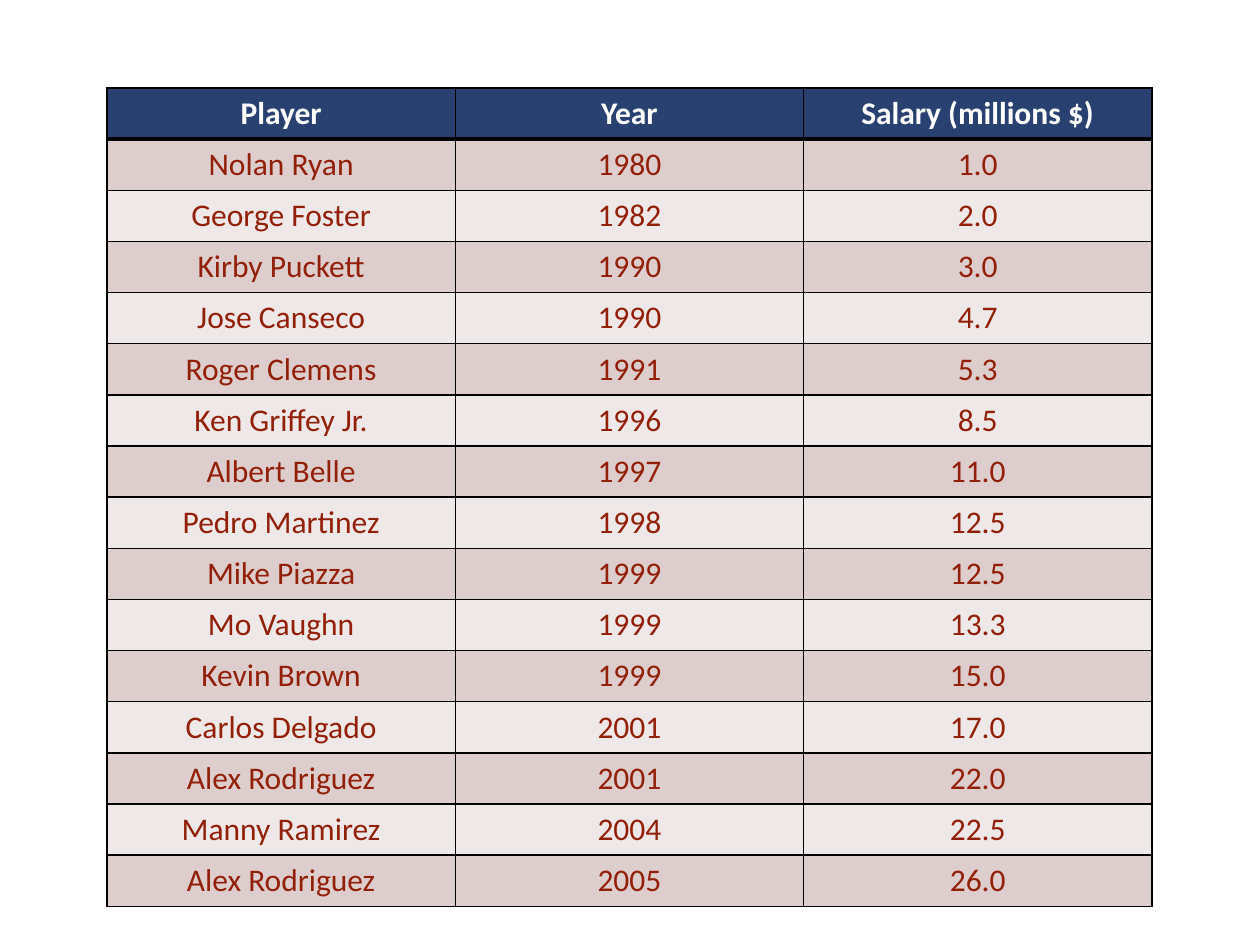
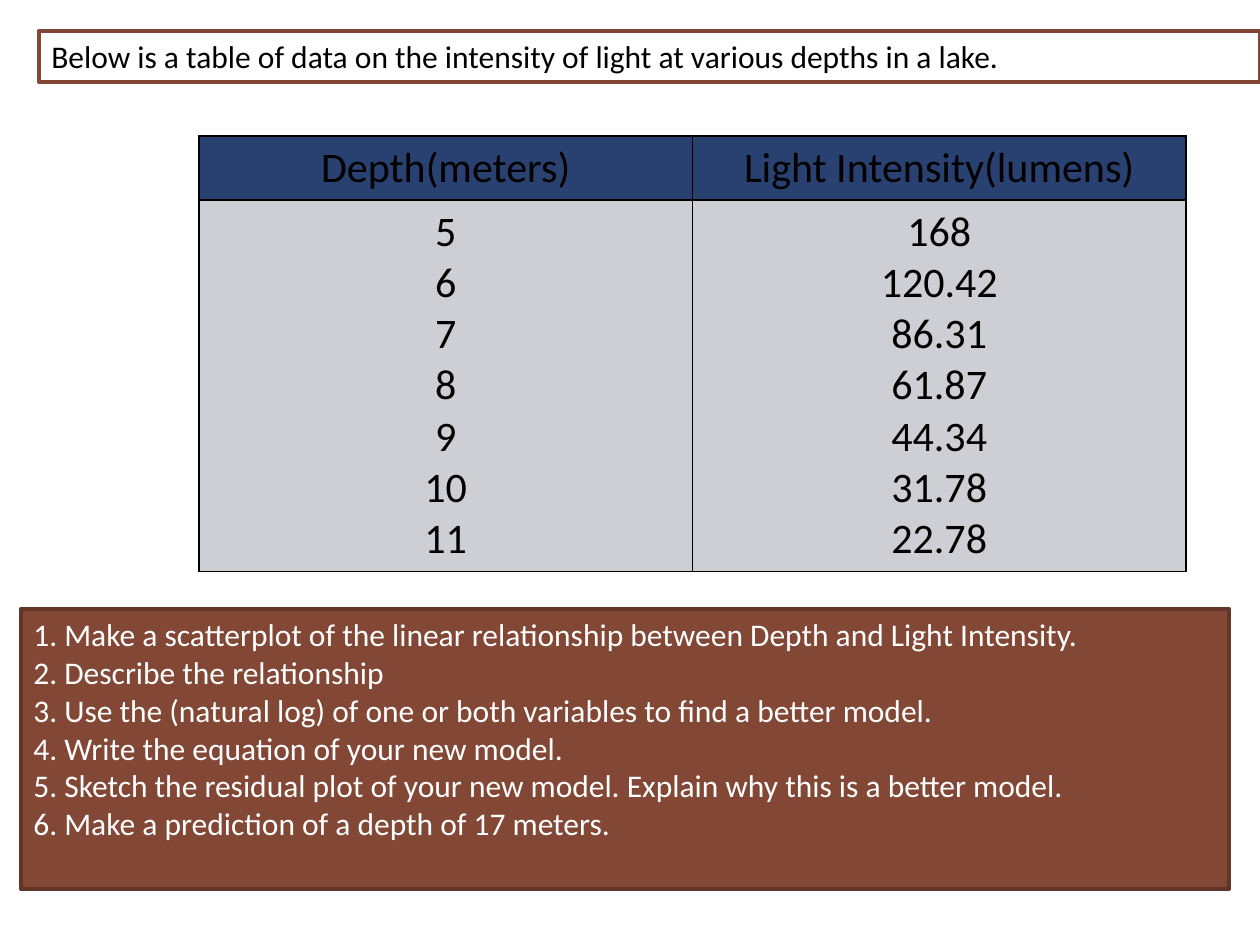
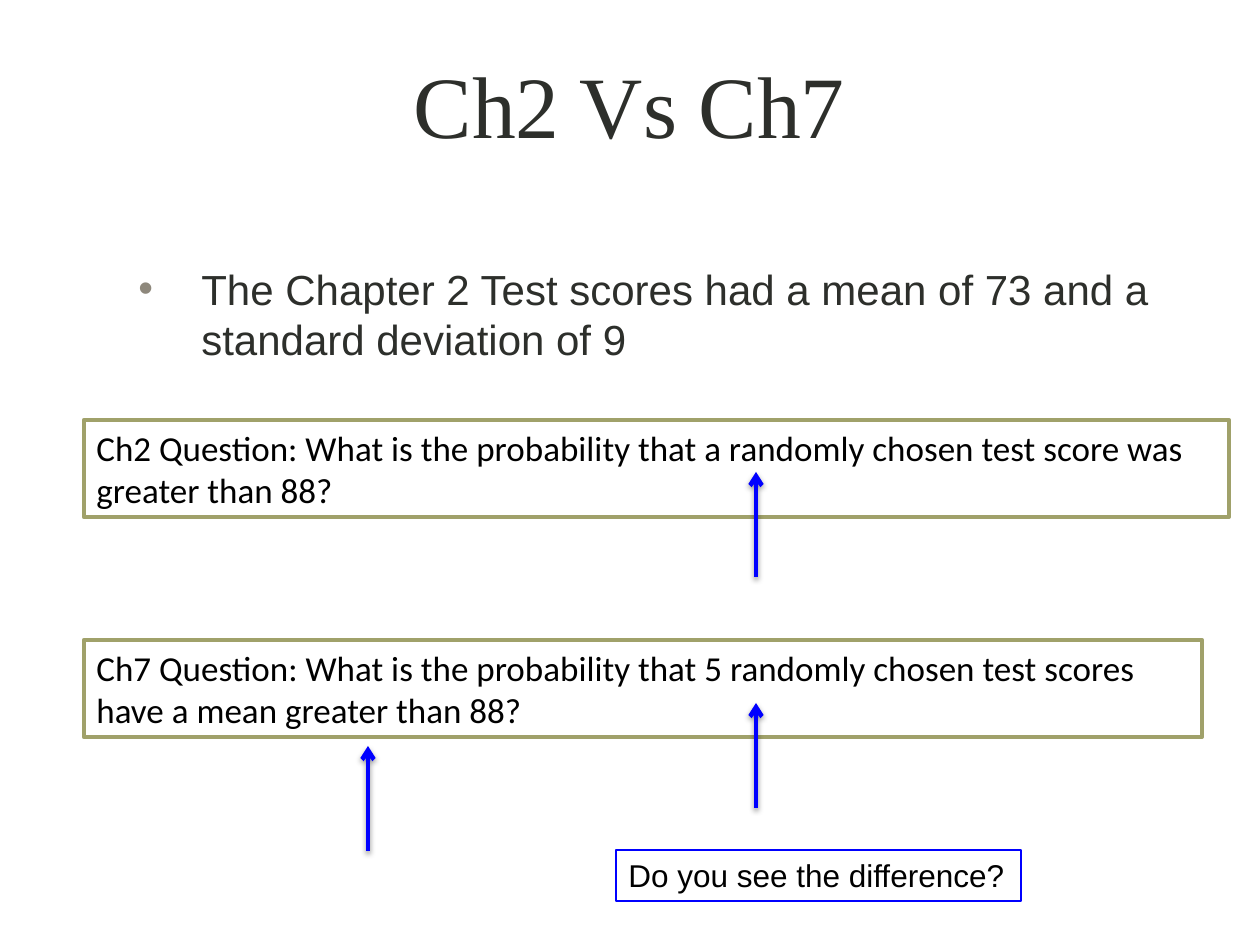
from pptx import Presentation
from pptx.dml.color import RGBColor
from pptx.enum.shapes import MSO_CONNECTOR as Connector, MSO_SHAPE as Preset
from pptx.enum.text import MSO_ANCHOR as Anchor, PP_ALIGN as Align
from pptx.oxml import parse_xml
from pptx.oxml.ns import nsdecls
from pptx.util import Inches, Pt

SCALE = Inches(1) / 126
BLANK, TITLE_ONLY = 6, 5

BLACK = RGBColor(0x00, 0x00, 0x00)
WHITE = RGBColor(0xFF, 0xFF, 0xFF)
NAVY = RGBColor(0x29, 0x41, 0x71)
GREY = RGBColor(0xCD, 0xCF, 0xD5)
ROSE = RGBColor(0xDE, 0xCD, 0xCD)
PALE_ROSE = RGBColor(0xEF, 0xE8, 0xE8)
RED = RGBColor(0x92, 0x1F, 0x07)
BROWN = RGBColor(0x83, 0x47, 0x36)
DARK_BROWN = RGBColor(0x61, 0x35, 0x28)
OLIVE = RGBColor(0xA0, 0xA1, 0x6A)
BLUE = RGBColor(0x00, 0x00, 0xFF)
INK = RGBColor(0x2D, 0x2F, 0x2B)
TAUPE = RGBColor(0x8E, 0x88, 0x7C)

TITLE = dict(name="Times New Roman", size=Pt(50), color=INK)
BULLET = dict(name="Arial", size=Pt(24), color=INK)
CALLOUT = dict(name="Arial", size=Pt(18), color=BLACK)
QUESTION = dict(name="Calibri", size=Pt(20), color=BLACK)
NOTE = dict(name="Calibri", size=Pt(18), color=BLACK)
TASK = NOTE | dict(color=WHITE)
DATA = NOTE | dict(size=Pt(24))
HEADING = TASK | dict(bold=True)
SALARY = NOTE | dict(color=RED, bold=False)

SALARIES = [
    ("Player", "Year", "Salary (millions $)"),
    ("Nolan Ryan", "1980", "1.0"),
    ("George Foster", "1982", "2.0"),
    ("Kirby Puckett", "1990", "3.0"),
    ("Jose Canseco", "1990", "4.7"),
    ("Roger Clemens", "1991", "5.3"),
    ("Ken Griffey Jr.", "1996", "8.5"),
    ("Albert Belle", "1997", "11.0"),
    ("Pedro Martinez", "1998", "12.5"),
    ("Mike Piazza", "1999", "12.5"),
    ("Mo Vaughn", "1999", "13.3"),
    ("Kevin Brown", "1999", "15.0"),
    ("Carlos Delgado", "2001", "17.0"),
    ("Alex Rodriguez", "2001", "22.0"),
    ("Manny Ramirez", "2004", "22.5"),
    ("Alex Rodriguez", "2005", "26.0"),
]
LIGHT = [
    ("Depth(meters)", "Light Intensity(lumens)"),
    ("5\n6\n7\n8\n9\n10\n11", "168\n120.42\n86.31\n61.87\n44.34\n31.78\n22.78"),
]
TASKS = """1. Make a scatterplot of the linear relationship between Depth and Light Intensity.
2. Describe the relationship
3. Use the (natural log) of one or both variables to find a better model.
4. Write the equation of your new model.
5. Sketch the residual plot of your new model. Explain why this is a better model.
6. Make a prediction of a depth of 17 meters."""


def px(*lengths):
    return [round(length * SCALE) for length in lengths]


class Deck:
    """Holds the presentation, its shared style and the current slide."""

    def __init__(self):
        self.show = Presentation()
        self.show.slide_width, self.show.slide_height = px(1260, 945)

    def new_slide(self, layout=BLANK):
        self.slide = self.show.slides.add_slide(self.show.slide_layouts[layout])

    def set_text(self, frame, text, style, align=Align.LEFT):
        frame.text = text
        frame.word_wrap = True
        for paragraph in frame.paragraphs:
            paragraph.alignment = align
            for run in paragraph.runs:
                for key, value in style.items():
                    if key == "color":
                        run.font.color.rgb = value
                    else:
                        setattr(run.font, key, value)

    def title(self, text, *place):
        heading = self.slide.shapes.title
        for side, length in zip(("left", "top", "width", "height"), px(*place)):
            setattr(heading, side, length)
        self.set_text(heading.text_frame, text, TITLE, Align.CENTER)
        heading.text_frame.vertical_anchor = Anchor.MIDDLE

    def bullet(self, text, *place):
        frame = self.slide.shapes.add_textbox(*px(*place)).text_frame
        self.set_text(frame, text, BULLET)
        for paragraph in frame.paragraphs:
            props = paragraph._p.get_or_add_pPr()
            props.set("marL", str(Inches(0.5)))
            props.set("indent", str(-Inches(0.5)))
            for mark in (f'buClr {nsdecls("a")}><a:srgbClr val="{TAUPE}"/></a:buClr>',
                         f'buFont {nsdecls("a")} typeface="Arial"/>',
                         f'buChar {nsdecls("a")} char="•"/>'):
                props.append(parse_xml("<a:" + mark))

    def box(self, text, place, style, line, fill=WHITE, weight=2.5):
        panel = self.slide.shapes.add_shape(Preset.RECTANGLE, *px(*place))
        panel.shadow.inherit = False
        if fill is None:
            panel.fill.background()
        else:
            panel.fill.solid()
            panel.fill.fore_color.rgb = fill
        panel.line.color.rgb = line
        panel.line.width = Pt(weight)
        self.set_text(panel.text_frame, text, style)
        panel.text_frame.vertical_anchor = Anchor.TOP

    def arrow(self, x, tail, tip):
        pointer = self.slide.shapes.add_connector(Connector.STRAIGHT, *px(x, tail, x, tip))
        pointer.line.color.rgb = BLUE
        pointer.line.width = Pt(2.5)
        pointer.line._get_or_add_ln().append(
            parse_xml(f'<a:tailEnd {nsdecls("a")} type="arrow"/>'))
        pointer._element.spPr.append(parse_xml(
            f'<a:effectLst {nsdecls("a")}><a:outerShdw blurRad="{Pt(3.1)}" dist="{Pt(1.6)}" '
            'dir="5400000" rotWithShape="0"><a:srgbClr val="000000"><a:alpha val="38000"/>'
            '</a:srgbClr></a:outerShdw></a:effectLst>'))

    def borders(self, cell, top=1, bottom=1):
        for side, weight in dict(L=1, R=1, T=top, B=bottom).items():
            cell._tc.get_or_add_tcPr().append(parse_xml(
                f'<a:ln{side} {nsdecls("a")} w="{Pt(weight)}"><a:solidFill>'
                f'<a:srgbClr val="{BLACK}"/></a:solidFill></a:ln{side}>'))

    def table(self, rows, place, head, body, bands, heights=(), rule=1):
        grid = self.slide.shapes.add_table(len(rows), len(rows[0]), *px(*place)).table
        for row, height in zip(grid.rows, px(*heights)):
            row.height = height
        for r, values in enumerate(rows):
            for c, value in enumerate(values):
                cell = grid.cell(r, c)
                self.borders(cell, rule if r == 1 else 1, rule if r == 0 else 1)
                cell.fill.solid()
                cell.fill.fore_color.rgb = bands[(r - 1) % len(bands)] if r else NAVY
                self.set_text(cell.text_frame, value, body if r else head, Align.CENTER)


def main():
    deck = Deck()

    deck.new_slide()
    deck.table(SALARIES, (107, 88, 1045, 819), HEADING, SALARY, (ROSE, PALE_ROSE), rule=3)

    deck.new_slide()
    deck.box("Below is a table of data on the intensity of light at various depths in a lake.",
             (39, 31, 1221, 51), NOTE, BROWN)
    deck.table(LIGHT, (199, 136, 987, 428), DATA, DATA, (GREY,), heights=(63, 365))
    deck.box(TASKS, (21, 609, 1208, 280), TASK, DARK_BROWN, fill=BROWN)

    deck.new_slide(TITLE_ONLY)
    deck.title("Ch2 Vs Ch7", 94, 9, 1071, 189)
    deck.bullet("The Chapter 2 Test scores had a mean of 73 and a standard deviation of 9",
                126, 257, 1071, 136)
    deck.box("Ch2 Question: What is the probability that a randomly chosen test score was "
             "greater than 88?", (84, 420, 1145, 97), QUESTION, OLIVE)
    deck.box("Ch7 Question: What is the probability that 5 randomly chosen test scores "
             "have a mean greater than 88?", (84, 640, 1118, 97), QUESTION, OLIVE)
    for x, tail, tip in ((756, 577, 472), (756, 808, 703), (368, 851, 746)):
        deck.arrow(x, tail, tip)
    deck.box("Do you see the difference?", (616, 850, 405, 51), CALLOUT, BLUE,
             fill=None, weight=0.75)

    deck.show.save("out.pptx")


if __name__ == "__main__":
    main()
